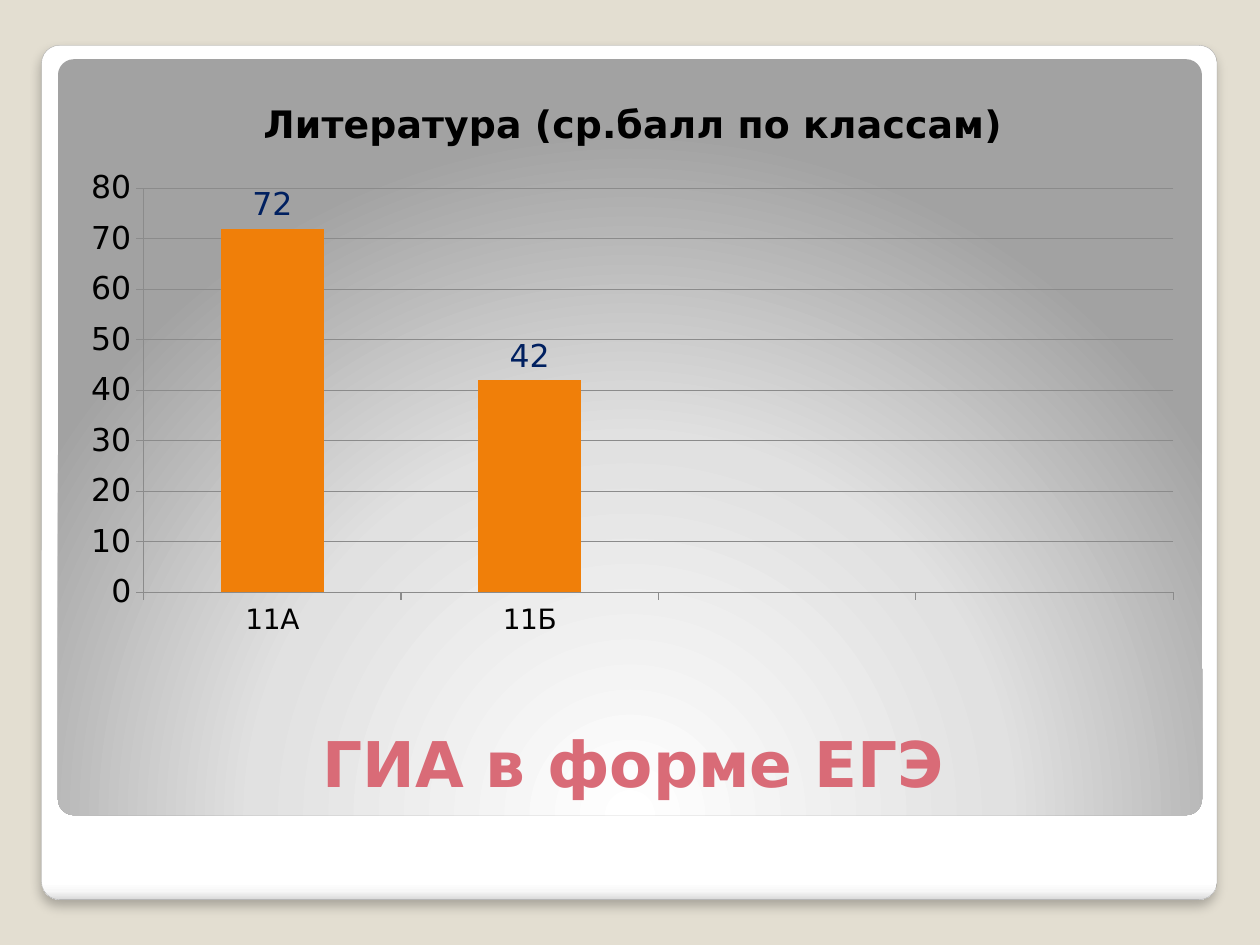
"""Build a slide with a column chart of average literature scores by class."""
import pptx
import pptx.chart.data
import pptx.dml.color
import pptx.enum.chart
import pptx.enum.shapes
import pptx.enum.text
import pptx.oxml
import pptx.oxml.ns
import pptx.util

Inches = pptx.util.Inches
Pt = pptx.util.Pt
RGBColor = pptx.dml.color.RGBColor
qn = pptx.oxml.ns.qn

TITLE = "ГИА в форме ЕГЭ"
CHART_TITLE = "Литература (ср.балл по классам)"
CLASSES = ["11А", "11Б", "", ""]
SCORES = [72, 42, None, None]

FONT = "DejaVu Sans"
SAND = RGBColor(0xE3, 0xDE, 0xD1)
ROSE = RGBColor(0xD9, 0x6B, 0x77)
ORANGE = RGBColor(0xF0, 0x7F, 0x09)
NAVY = RGBColor(0x00, 0x20, 0x60)
BLACK = RGBColor(0x00, 0x00, 0x00)
GREY = RGBColor(0x8B, 0x8B, 0x8B)
EDGE = RGBColor(0xA4, 0xA4, 0xA4)

FRAME_BOX = (0.33, 0.36, 9.33, 6.78)
PANEL_BOX = (0.46, 0.47, 9.08, 6)
TITLE_BOX = (0.55, 5.23, 8.95, 1.17)
CHART_BOX = (0.55, 0.58, 8.95, 4.58)
PLOT_LAYOUT = {"x": 0.066, "y": 0.2, "w": 0.913, "h": 0.7}

FRAME_STOPS = [(0, "FFFFFF"), (98, "FFFFFF"), (99, "F7F7F7"), (100, "DADADA")]
PANEL_STOPS = [(0, "FFFFFF"), (55, "E1E1E1"), (100, "A2A2A2")]
DOWNWARD = '<a:lin ang="5400000" scaled="0"/>'
FROM_BELOW = ('<a:path path="circle"><a:fillToRect l="50000" t="175000" '
              'r="50000" b="-75000"/></a:path>')
SHADOW = ('<a:outerShdw {ns} blurRad="76200" dist="50800" dir="5400000" algn="tl" '
          'rotWithShape="0"><a:srgbClr val="000000"><a:alpha val="25000"/>'
          '</a:srgbClr></a:outerShdw>')
DRAWING_NS = pptx.oxml.ns.nsdecls("a")


def place(bounds):
    return [Inches(length) for length in bounds]


def style_font(font, size, color, bold=False):
    font.name, font.size, font.bold = FONT, Pt(size), bold
    font.color.rgb = color


def add_card(page, bounds, stops, direction):
    card = page.shapes.add_shape(
        pptx.enum.shapes.MSO_SHAPE.ROUNDED_RECTANGLE, *place(bounds))
    card.adjustments[0] = 0.021
    card.shadow.inherit = False
    card.line.fill.background()
    card.fill.solid()
    stop_xml = "".join(
        f'<a:gs pos="{position * 1000}"><a:srgbClr val="{color}"/></a:gs>'
        for position, color in stops)
    gradient = pptx.oxml.parse_xml(
        f'<a:gradFill {DRAWING_NS} rotWithShape="1"><a:gsLst>{stop_xml}</a:gsLst>'
        f'{direction}</a:gradFill>')
    properties = card.element.spPr
    properties.replace(properties.find(qn("a:solidFill")), gradient)
    page.shapes.title.element.addprevious(card.element)
    return card


def add_title(page):
    title = page.shapes.title
    title.left, title.top, title.width, title.height = place(TITLE_BOX)
    title.text_frame.text = TITLE
    title.text_frame.vertical_anchor = pptx.enum.text.MSO_ANCHOR.BOTTOM
    paragraph = title.text_frame.paragraphs[0]
    paragraph.alignment = pptx.enum.text.PP_ALIGN.CENTER
    style_font(paragraph.runs[0].font, 36, ROSE, bold=True)


def add_score_chart(page):
    data = pptx.chart.data.CategoryChartData()
    data.categories = CLASSES
    data.add_series("Series 1", SCORES)
    chart = page.shapes.add_chart(
        pptx.enum.chart.XL_CHART_TYPE.COLUMN_CLUSTERED, *place(CHART_BOX), data).chart
    chart.has_legend = False
    style_font(chart.font, 18, BLACK)
    chart.chart_title.text_frame.text = CHART_TITLE
    chart.chart_title.include_in_layout = False
    heading = chart.chart_title.text_frame.paragraphs[0].runs[0]
    style_font(heading.font, 21.6, BLACK, bold=True)

    for axis, size in ((chart.category_axis, 16), (chart.value_axis, 18)):
        style_font(axis.tick_labels.font, size, BLACK)
        axis.major_tick_mark = pptx.enum.chart.XL_TICK_MARK.OUTSIDE
        axis.format.line.color.rgb = GREY
    scale = chart.value_axis
    scale.minimum_scale, scale.maximum_scale, scale.major_unit = 0, 80, 10
    scale.has_major_gridlines = True
    scale.major_gridlines.format.line.color.rgb = GREY

    plot = chart.plots[0]
    plot.gap_width = 150
    plot.vary_by_categories = False
    series = plot.series[0]
    series.format.fill.solid()
    series.format.fill.fore_color.rgb = ORANGE
    labels = series.data_labels
    labels.show_value = True
    labels.position = pptx.enum.chart.XL_LABEL_POSITION.OUTSIDE_END
    style_font(labels.font, 18, NAVY)

    sizes = "".join(f'<c:{key} val="{value}"/>' for key, value in PLOT_LAYOUT.items())
    layout = pptx.oxml.parse_xml(
        f'<c:layout {pptx.oxml.ns.nsdecls("c")}><c:manualLayout>'
        '<c:layoutTarget val="inner"/><c:xMode val="edge"/><c:yMode val="edge"/>'
        f'{sizes}</c:manualLayout></c:layout>')
    plot_area = chart.element.find(".//" + qn("c:plotArea"))
    for old in plot_area.findall(qn("c:layout")):
        plot_area.remove(old)
    plot_area.insert(0, layout)


def main():
    deck = pptx.Presentation()
    deck.slide_width, deck.slide_height = Inches(10), Inches(7.5)
    page = deck.slides.add_slide(deck.slide_layouts[5])
    page.background.fill.solid()
    page.background.fill.fore_color.rgb = SAND

    frame = add_card(page, FRAME_BOX, FRAME_STOPS, DOWNWARD)
    frame.line.color.rgb = EDGE
    frame.line.width = Pt(0.16)
    effects = frame.element.spPr.find(qn("a:effectLst"))
    effects.append(pptx.oxml.parse_xml(SHADOW.format(ns=DRAWING_NS)))
    add_card(page, PANEL_BOX, PANEL_STOPS, FROM_BELOW)
    add_title(page)
    add_score_chart(page)
    deck.save("out.pptx")


if __name__ == "__main__":
    main()
